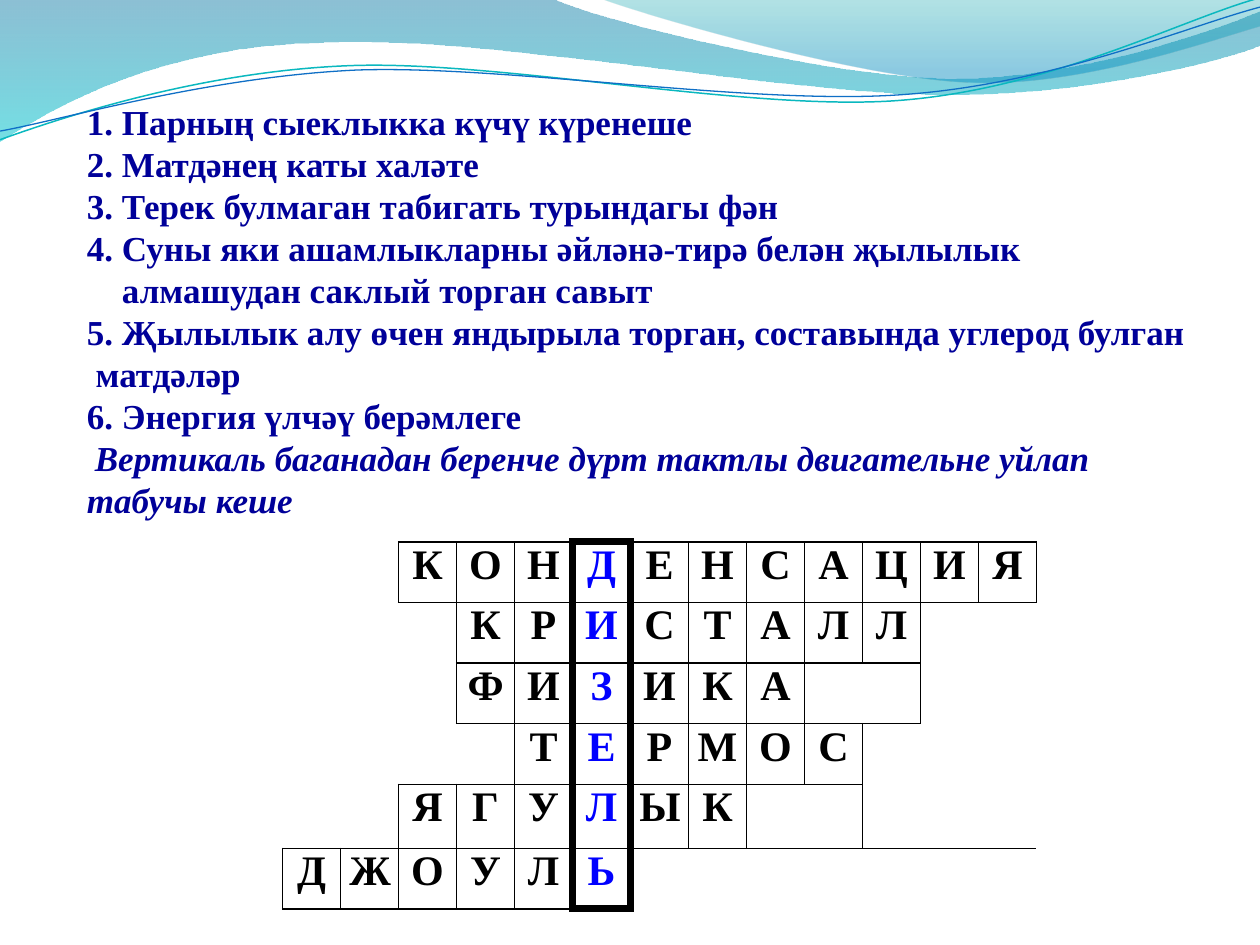
import pptx
import pptx.dml.color
import pptx.enum.text
import pptx.oxml
import pptx.oxml.ns
import pptx.util

Pt = pptx.util.Pt
qn = pptx.oxml.ns.qn
NS = pptx.oxml.ns.nsdecls("a")
FONT = "Times New Roman"
KEY_COL = 5
NO_STYLE = "{2D5ABB26-0587-4C30-8999-92F81FD0307C}"

BANDS = [
    ([[(0, 0)], [(317, 0)], [(343, 12), (478, 45), (546, 45)],
      [(614, 45), (690, 19), (720, 6.5)], [(720, 26)],
      [(708, 32), (626, 55), (537, 54)], [(448, 54), (275, 20), (185, 24.5)],
      [(93, 26), (33, 60), (0, 81)]],
     [(0, "0074A1", 45), (1, "00C6CF", 55)]),
    ([[(345, 0)], [(366, 8), (491, 45), (554, 47)],
      [(616, 50), (692, 23), (720, 15)], [(720, 0)]],
     [(0, "00A1A9", 30), (0.8, "008BBF", 45)]),
]
STRANDS = [
    ([[(-1.8, 63)], [(34, 52), (114, 29.4), (199, 30)],
      [(284, 30.4), (426, 67), (512, 64.7)], [(599.5, 62.3), (676.4, 26), (720.5, 16)]],
     "0AB8BF", 0.85),
    ([[(-1.5, 58)], [(33, 53.6), (118, 32.6), (204, 32.7)],
      [(290, 33.7), (429, 63.8), (515.5, 61.4)], [(602, 59.4), (679.3, 30), (721.8, 21)]],
     "0F6FC6", 0.75),
]
CLUES = [
    ("1. Парның сыеклыкка күчү күренеше", 0, 0),
    ("2. Матдәнең каты халәте", 0, 0),
    ("3. Терек булмаган табигать турындагы фән", 0, 0),
    ("4. Суны яки ашамлыкларны әйләнә-тирә белән җылылык", 0, 0),
    ("алмашудан саклый торган савыт", 20, 0),
    ("5. Җылылык алу өчен яндырыла торган, составында углерод булган матдәләр", 5, -5),
    ("6. Энергия үлчәү берәмлеге", 0, 0),
    ("Вертикаль баганадан беренче дүрт тактлы двигательне уйлап табучы кеше", 0, 4.5),
]
WORDS = [(2, "КОНДЕНСАЦИЯ"), (3, "КРИСТАЛЛ"), (3, "ФИЗИКА"),
         (4, "ТЕРМОС"), (2, "ЯГУЛЫК"), (0, "ДЖОУЛЬ")]
BLANKS = [
    (0, 0, 1, 2, "R"), (1, 0, 1, 3, "R"), (1, 11, 2, 2, "LTR"),
    (2, 0, 1, 1, ""), (2, 1, 1, 2, "R"), (2, 9, 1, 2, "LT"),
    (3, 0, 1, 3, ""), (3, 3, 1, 1, "TRB"), (3, 10, 2, 3, "LR"),
    (4, 0, 1, 2, "RB"), (4, 8, 1, 2, "LT"), (5, 6, 1, 7, "LT"),
]


def color(value):
    return pptx.dml.color.RGBColor.from_string(value)


def add_curve(slide, x, y, path, close):
    points = [(Pt(px), Pt(py)) for seg in path for px, py in seg]
    builder = slide.shapes.build_freeform(*points[0])
    builder.add_line_segments(points[1:], close=close)
    sp = builder.convert_to_shape(Pt(x), Pt(y))
    sp.shadow.inherit = False
    lines = iter(list(sp._element.spPr.iter(qn("a:lnTo"))))
    for seg in path[1:]:
        steps = [next(lines) for _ in seg]
        if len(steps) == 3:
            bezier = pptx.oxml.parse_xml(f"<a:cubicBezTo {NS}/>")
            steps[0].addprevious(bezier)
            for step in steps:
                bezier.append(step[0])
                step.getparent().remove(step)
    return sp


def add_waves(slide, x, y):
    for path, stops in BANDS:
        sp = add_curve(slide, x, y, path, True)
        sp.line.fill.background()
        sp.fill.gradient()
        sp.fill.gradient_angle = 270
        for stop, (pos, value, alpha) in zip(sp.fill.gradient_stops, stops):
            stop.position = pos
            stop.color.rgb = color(value)
        for clr, (pos, value, alpha) in zip(sp._element.spPr.iter(qn("a:srgbClr")), stops):
            clr.append(pptx.oxml.parse_xml(f'<a:alpha {NS} val="{alpha * 1000}"/>'))
    for path, value, width in STRANDS:
        sp = add_curve(slide, x, y, path, False)
        sp.rotation = 357.3
        sp.fill.background()
        sp.line.color.rgb = color(value)
        sp.line.width = Pt(width)


def set_font(p, size, value):
    p.font.name = FONT
    p.font.size = Pt(size)
    p.font.bold = True
    p.font.color.rgb = color(value)


def add_clues(slide, x, y, w, h):
    sp = slide.placeholders[1]
    sp.left, sp.top, sp.width, sp.height = Pt(x), Pt(y), Pt(w), Pt(h)
    slide.shapes._spTree.append(sp._element)
    tf = sp.text_frame
    tf.word_wrap = True
    tf.auto_size = pptx.enum.text.MSO_AUTO_SIZE.NONE
    tf.vertical_anchor = pptx.enum.text.MSO_ANCHOR.TOP
    tf.margin_top = Pt(4.8)
    for i, (text, margin, indent) in enumerate(CLUES):
        p = tf.add_paragraph() if i else tf.paragraphs[0]
        p.text = text
        p.space_before = Pt(0)
        p.line_spacing = Pt(24)
        set_font(p, 20, "000099")
        pPr = p._p.get_or_add_pPr()
        pPr.set("marL", str(Pt(margin)))
        pPr.set("indent", str(Pt(indent)))
        pPr.insert_element_before(pptx.oxml.parse_xml(f"<a:buNone {NS}/>"),
                                  "a:tabLst", "a:defRPr", "a:extLst")
    p.font.italic = True


def set_borders(cell, widths, dotted=""):
    tcPr = cell._tc.get_or_add_tcPr()
    for side in "LRTB":
        width = widths.get(side, 0)
        dash = "sysDot" if side in dotted else "solid"
        paint = (f'<a:solidFill><a:srgbClr val="000000"/></a:solidFill><a:prstDash val="{dash}"/>'
                 if width else "<a:noFill/>")
        tcPr.append(pptx.oxml.parse_xml(
            f'<a:ln{side} {NS} w="{Pt(width)}">{paint}</a:ln{side}>'))
    cell.fill.background()


def letter_borders(row, col):
    widths = dict.fromkeys("LRTB", 1)
    if col in (KEY_COL, KEY_COL + 1):
        widths["L"] = 4.5
    if col in (KEY_COL - 1, KEY_COL):
        widths["R"] = 4.5
    if col == KEY_COL and row == 0:
        widths["T"] = 4.5
    if col == KEY_COL and row == len(WORDS) - 1:
        widths["B"] = 4.5
    return widths


def add_blank(table, top, left, n_rows, n_cols, sides):
    bottom, right = top + n_rows - 1, left + n_cols - 1
    if n_rows * n_cols > 1:
        table.cell(top, left).merge(table.cell(bottom, right))
    dotted = "R" if right == len(table.columns) - 1 else ""
    for row in range(top, bottom + 1):
        for col in range(left, right + 1):
            edges = {"L": col == left, "R": col == right,
                     "T": row == top, "B": row == bottom}
            widths = {side: 1 for side in sides if edges[side]}
            if col == KEY_COL + 1:
                widths["L"] = 4.5
            set_borders(table.cell(row, col), widths, dotted)


def add_crossword(slide, x, y, w, h):
    n_cols = 13
    table = slide.shapes.add_table(len(WORDS), n_cols, Pt(x), Pt(y), Pt(w), Pt(h)).table
    table.first_row = table.horz_banding = False
    table._tbl.tblPr.find(qn("a:tableStyleId")).text = NO_STYLE
    for column in table.columns:
        column.width = Pt(w / n_cols)
    for i, row in enumerate(table.rows):
        row.height = Pt(36.6 if i == 4 else (h - 36.6) / 5)
    for row, (start, word) in enumerate(WORDS):
        for col, letter in enumerate(word, start):
            cell = table.cell(row, col)
            cell.margin_left = cell.margin_right = Pt(5)
            cell.margin_top = cell.margin_bottom = Pt(0)
            p = cell.text_frame.paragraphs[0]
            p.text = letter
            p.alignment = pptx.enum.text.PP_ALIGN.CENTER
            set_font(p, 24, "0000FF" if col == KEY_COL else "000000")
            set_borders(cell, letter_borders(row, col))
    for blank in BLANKS:
        add_blank(table, *blank)


def main():
    prs = pptx.Presentation()
    prs.slide_width, prs.slide_height = Pt(720), Pt(540)
    slide = prs.slides.add_slide(prs.slide_layouts[1])
    title = slide.shapes.title._element
    title.getparent().remove(title)
    add_waves(slide, 0, 0)
    add_crossword(slide, 161.5, 309.6, 430.8, 209.8)
    add_clues(slide, 42.5, 52.5, 646.5, 271.5)
    prs.save("out.pptx")


if __name__ == "__main__":
    main()
